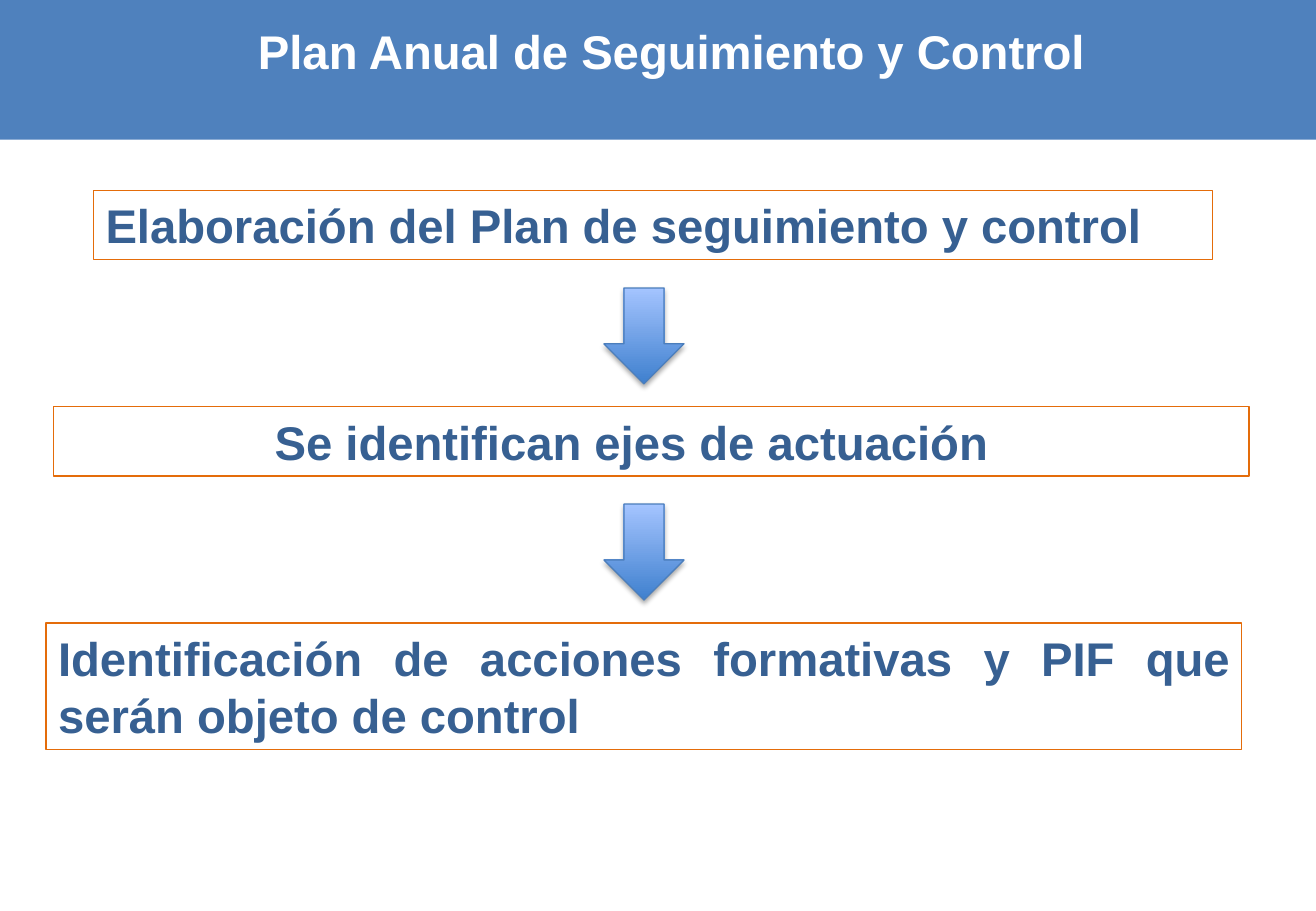
"""Build the slide on the annual monitoring and control plan."""
from lxml.etree import SubElement
from pptx import Presentation
from pptx.dml.color import RGBColor
from pptx.enum.shapes import MSO_SHAPE
from pptx.enum.text import MSO_ANCHOR, MSO_AUTO_SIZE, PP_ALIGN
from pptx.oxml.ns import qn
from pptx.util import Inches, Pt

COLORS = {"band": "4F81BD", "title": "FFFFFF", "text": "376092", "border": "E46C0A",
          "arrow_bottom": "3F80CE", "arrow_top": "A4C4FF", "arrow_line": "4B7EBC",
          "shadow": "000000"}
FONT = {"name": "Arial", "size": Pt(28), "bold": True}
FRAME = {"word_wrap": True, "auto_size": MSO_AUTO_SIZE.NONE,
         "vertical_anchor": MSO_ANCHOR.TOP}


def add_shape(kind, left, top, width, height):
    sp = s.shapes.add_shape(kind, Inches(left), Inches(top), Inches(width), Inches(height))
    sp.shadow.inherit = False
    return sp


def write(sp, text, color, align):
    tf = sp.text_frame
    for key, value in FRAME.items():
        setattr(tf, key, value)
    p = tf.paragraphs[0]
    p.alignment = align
    r = p.add_run()
    r.text = text
    for key, value in FONT.items():
        setattr(r.font, key, value)
    r.font.color.rgb = RGBColor.from_string(COLORS[color])


prs = Presentation()
prs.slide_width, prs.slide_height = Inches(10.83), Inches(7.5)
s = prs.slides.add_slide(prs.slide_layouts[5])

band = add_shape(MSO_SHAPE.RECTANGLE, 0, 0, 10.83, 1.15)
band.fill.solid()
band.fill.fore_color.rgb = RGBColor.from_string(COLORS["band"])
band.line.fill.background()
s.shapes._spTree.insert(2, band._element)

title = s.shapes.title
title.left, title.top = Inches(0.11), Inches(0.13)
title.width, title.height = Inches(10.83), Inches(0.57)
write(title, "Plan Anual de Seguimiento y Control", "title", PP_ALIGN.CENTER)

FIRST_TOP, STEP = 1.57, 1.78
steps = [
    ("Elaboración del Plan de seguimiento y control", 0.77, 9.21, 0.57, 0.1),
    ("Se identifican ejes de actuación", 0.44, 9.84, 0.57, 1.82),
    ("Identificación de acciones formativas y PIF que serán objeto de control",
     0.38, 9.84, 1.04, 0.1),
]
for i, (text, left, width, height, margin) in enumerate(steps):
    box = add_shape(MSO_SHAPE.RECTANGLE, left, FIRST_TOP + i * STEP, width, height)
    box.fill.background()
    box.line.color.rgb = RGBColor.from_string(COLORS["border"])
    box.line.width = Pt(0.75)
    box.text_frame.margin_left = Inches(margin)
    write(box, text, "text", PP_ALIGN.JUSTIFY)

for i in range(len(steps) - 1):
    arrow = add_shape(MSO_SHAPE.DOWN_ARROW, 4.97, FIRST_TOP + 0.8 + i * STEP, 0.66, 0.79)
    arrow.fill.gradient()
    arrow.fill.gradient_angle = 90
    for stop, color in zip(arrow.fill.gradient_stops, ("arrow_bottom", "arrow_top")):
        stop.color.rgb = RGBColor.from_string(COLORS[color])
    arrow.line.color.rgb = RGBColor.from_string(COLORS["arrow_line"])
    arrow.line.width = Pt(0.75)
    effects = arrow._element.spPr.find(qn("a:effectLst"))
    shadow = SubElement(effects, qn("a:outerShdw"), blurRad=str(Pt(3.1)),
                        dist=str(Pt(1.8)), dir="5400000", rotWithShape="0")
    tint = SubElement(shadow, qn("a:srgbClr"), val=COLORS["shadow"])
    SubElement(tint, qn("a:alpha"), val="35000")

prs.save("out.pptx")
